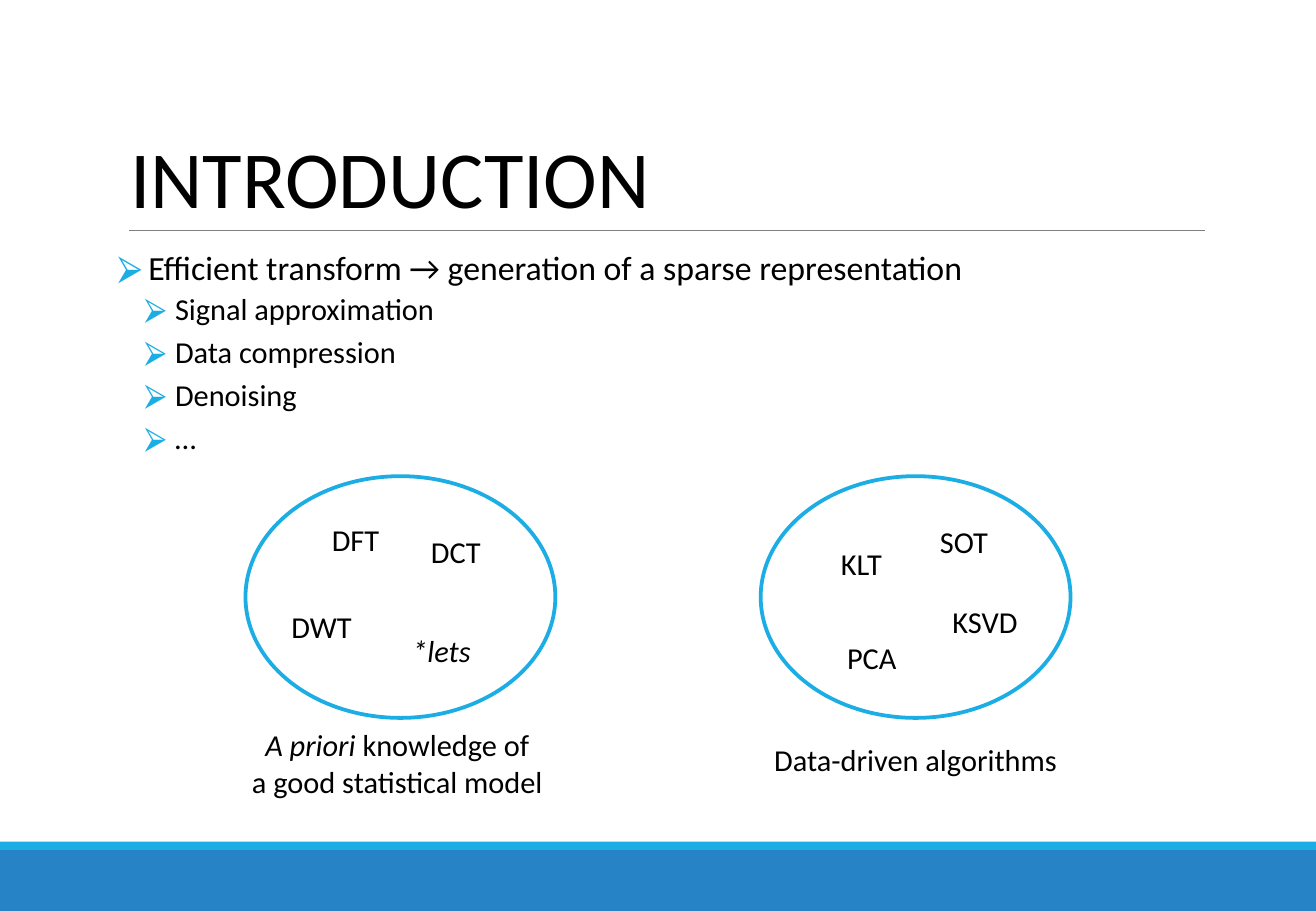
from lxml import etree
from pptx import Presentation
from pptx.dml.color import RGBColor
from pptx.enum.shapes import MSO_CONNECTOR as CONN, MSO_SHAPE as SHAPE
from pptx.enum.text import MSO_ANCHOR as ANCHOR, MSO_AUTO_SIZE as AUTO, PP_ALIGN as ALIGN
from pptx.oxml.ns import qn
from pptx.util import Inches, Pt

W, H = 10.83, 7.5
BLACK, BLUE, CYAN, GRAY = "000000", "2683C6", "1CADE4", "7F7F7F"


def rgb(value):
    return RGBColor.from_string(value)


def inches(*lengths):
    return [Inches(n) for n in lengths]


def place(sp, box):
    sp.left, sp.top, sp.width, sp.height = inches(*box)


def style(font, size, italic=False):
    font.name, font.size, font.italic = "Calibri", Pt(size), italic
    font.color.rgb = rgb(BLACK)


def add_plain_shape(slide, kind, box, fill=None, line=None):
    sp = slide.shapes.add_shape(kind, *inches(*box))
    sp.shadow.inherit = False
    if fill:
        sp.fill.solid()
        sp.fill.fore_color.rgb = rgb(fill)
    else:
        sp.fill.background()
    if line:
        sp.line.color.rgb = rgb(line)
        sp.line.width = Pt(2.25)
    else:
        sp.line.fill.background()


def add_footer_bars(slide, box):
    x, y, w, h = box
    strip = 0.12 * h
    add_plain_shape(slide, SHAPE.RECTANGLE, (x, y + strip, w, h - strip), fill=BLUE)
    add_plain_shape(slide, SHAPE.RECTANGLE, (x, y, w, strip), fill=CYAN)


def add_title(slide, box, text):
    """Fill the title placeholder and rule a line under it."""
    x, y, w, h = box
    title = slide.shapes.title
    place(title, box)
    tf = title.text_frame
    tf.text = text
    tf.auto_size, tf.vertical_anchor = AUTO.NONE, ANCHOR.BOTTOM
    p = tf.paragraphs[0]
    p.alignment, p.line_spacing = ALIGN.LEFT, 0.85
    style(p.runs[0].font, 48)

    rule = slide.shapes.add_connector(
        CONN.STRAIGHT, *inches(x + 0.09, y + h, x + w + 0.01, y + h))
    rule.line.color.rgb = rgb(GRAY)
    rule.line.width = Pt(0.75)
    etree.SubElement(rule._element.spPr, qn("a:effectLst"))


def add_bullet(p, margin, hang):
    pPr = p._p.get_or_add_pPr()
    pPr.set("marL", str(Inches(margin)))
    pPr.set("indent", str(-Inches(hang)))
    color = etree.SubElement(pPr, qn("a:buClr"))
    etree.SubElement(color, qn("a:srgbClr"), val=CYAN)
    etree.SubElement(pPr, qn("a:buChar"), char="⮚")


def add_list(slide, box, items):
    """Fill the body placeholder with (level, space before, text) items."""
    body = slide.placeholders[1]
    place(body, box)
    tf = body.text_frame
    tf.text = "\n".join(text for _, _, text in items)
    tf.auto_size, tf.vertical_anchor = AUTO.NONE, ANCHOR.TOP
    tf.margin_left = tf.margin_right = 0
    for p, (level, before, _) in zip(tf.paragraphs, items):
        p.level = level
        add_bullet(p, 0.25 + 0.22 * level, 0.25)
        p.line_spacing, p.space_before = 0.9, Pt(before)
        style(p.runs[0].font, 20 - 2 * level)


def add_text(slide, box, lines, align=ALIGN.LEFT, side=0.1):
    """Write lines, each a list of (text, italic) runs."""
    tf = slide.shapes.add_textbox(*inches(*box)).text_frame
    tf.word_wrap = True
    tf.margin_left = tf.margin_right = Inches(side)
    for i, line in enumerate(lines):
        p = tf.add_paragraph() if i else tf.paragraphs[0]
        p.alignment = align
        for text, italic in line:
            r = p.add_run()
            r.text = text
            style(r.font, 18, italic)


def add_cluster(slide, box, words, caption, caption_at):
    """Draw an ellipse of words with a caption, placed by shares of the box."""
    x, y, w, h = box
    add_plain_shape(slide, SHAPE.OVAL, box, line=CYAN)
    for text, italic, left, top in words:
        add_text(slide, (x + left * w, y + top * h, 0.32 * w, 0.2 * h), [[(text, italic)]])
    left, top = caption_at
    add_text(slide, (x + left * w, y + top * h, w, 0.2 * h * len(caption)),
             caption, ALIGN.CENTER, side=0)


def main():
    prs = Presentation()
    prs.slide_width, prs.slide_height = inches(W, H)
    slide = prs.slides.add_slide(prs.slide_layouts[1])

    add_footer_bars(slide, (0, 6.93, W, H - 6.93))
    left, width = 0.97, 8.94
    add_title(slide, (left, 0.31, width, 1.59), "INTRODUCTION")
    add_list(slide, (left, 2.02, width, 4.4), [
        (0, 0, "Efficient transform → generation of a sparse representation"),
        (1, 4, "Signal approximation"),
        (1, 6, "Data compression"),
        (1, 6, "Denoising"),
        (1, 6, "…"),
    ])

    top, size = 3.92, (2.55, 1.99)
    add_cluster(
        slide, (2.02, top, *size),
        [("DFT", False, 0.24, 0.16), ("DCT", False, 0.56, 0.21),
         ("DWT", False, 0.11, 0.52), ("*lets", True, 0.5, 0.62)],
        [[("A priori", True), (" knowledge of", False)],
         [("a good statistical model", False)]],
        (-0.01, 1.01))
    add_cluster(
        slide, (6.26, top, *size),
        [("KLT", False, 0.22, 0.26), ("SOT", False, 0.54, 0.17),
         ("KSVD", False, 0.58, 0.5), ("PCA", False, 0.24, 0.65)],
        [[("Data-driven algorithms", False)]],
        (0, 1.07))
    prs.save("out.pptx")


if __name__ == "__main__":
    main()
